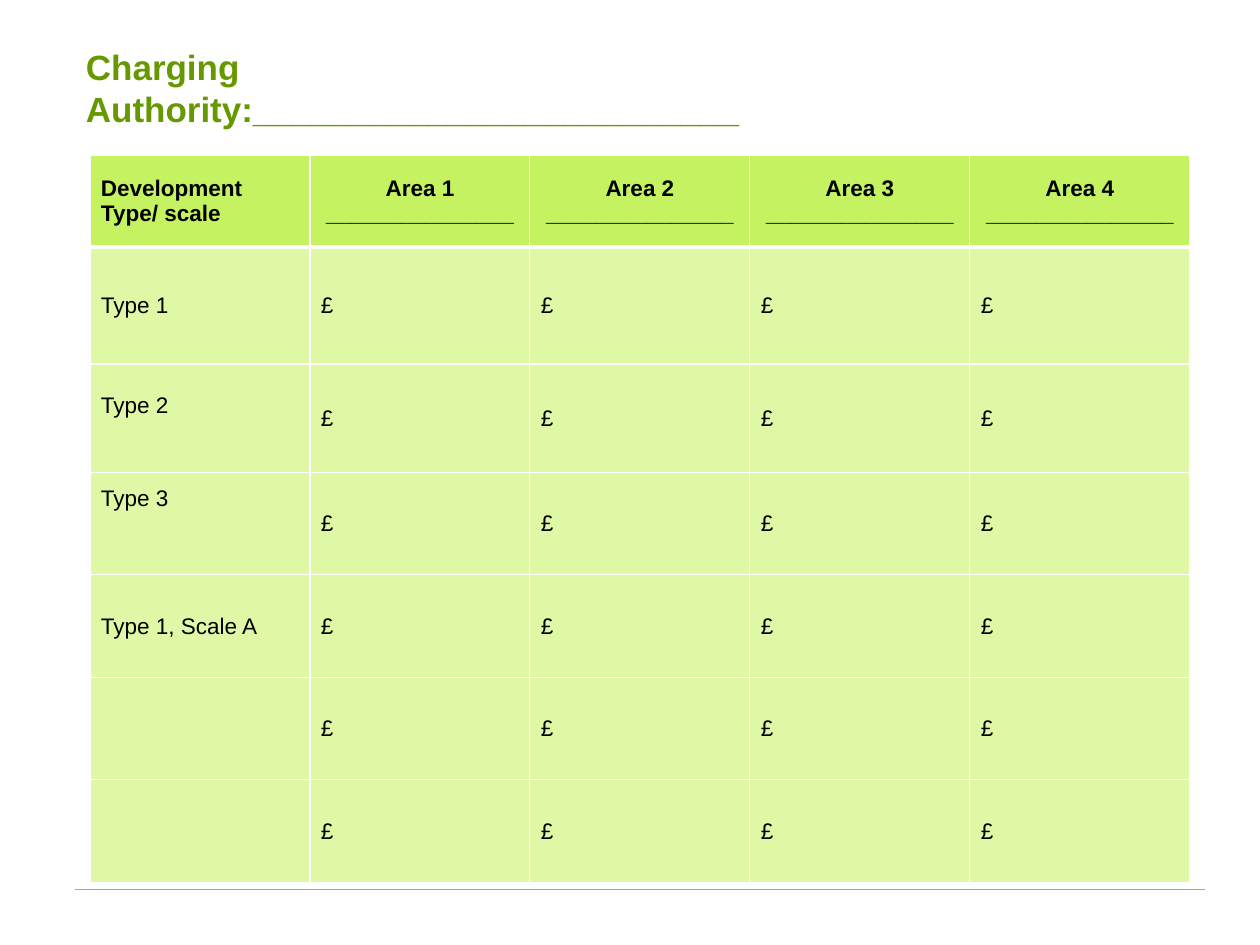
from pptx import Presentation
from pptx.dml.color import RGBColor
from pptx.enum.shapes import MSO_CONNECTOR
from pptx.enum.text import MSO_ANCHOR, PP_ALIGN
from pptx.oxml.ns import qn
from pptx.util import Emu, Pt
from lxml.etree import SubElement

TYPES = ["Type 1", "Type 2", "Type 3", "Type 1, Scale A", "", ""]
AREAS = 4
WIDTH = 220
HEIGHTS = [92, 117, 109] + [102, 103] * 2
LIFTS = {"Type 2": 25, "Type 3": 50}
PAD_X, PAD_Y = 11, 6


def px(count):
    """Turn whole pixels, 90 to the inch, into EMU."""
    return Emu(count * 10160)


def tint(code):
    """Turn a hex string into a colour."""
    return RGBColor.from_string(code)


def style(frame, size, color, bold=False, align=PP_ALIGN.LEFT):
    """Format every run of a text frame."""
    for para in frame.paragraphs:
        para.alignment = align
        for run in para.runs:
            font = run.font
            font.name, font.size, font.bold = "Arial", Pt(size), bold
            font.color.rgb = tint(color)


def pad(item, base=PAD_Y):
    """Set the four margins of a cell or text frame."""
    item.margin_left = item.margin_right = px(PAD_X)
    item.margin_top, item.margin_bottom = px(PAD_Y), px(base)


def add_title(slide, text, left, top, width, height):
    """Add the slide heading."""
    frame = slide.shapes.add_textbox(px(left), px(top), px(width), px(height)).text_frame
    frame.word_wrap = True
    frame.vertical_anchor = MSO_ANCHOR.MIDDLE
    pad(frame)
    frame.text = text
    style(frame, 28, "669900", bold=True)


def add_rule(slide, left, right, y):
    """Add the thin footer rule."""
    rule = slide.shapes.add_connector(MSO_CONNECTOR.STRAIGHT, px(left), px(y), px(right), px(y))
    rule.line.color.rgb = tint("99CC00")
    rule.line.width = Pt(0.75)
    SubElement(rule.element.spPr, qn("a:effectLst"))


def edge(cell, **sides):
    """Draw white cell borders of the given point widths."""
    props = cell._tc.get_or_add_tcPr()
    for side, width in sides.items():
        line = SubElement(props, qn(f"a:ln{side}"), w=str(Pt(width)))
        fill = SubElement(line, qn("a:solidFill"))
        SubElement(fill, qn("a:srgbClr"), val="FFFFFF")


def fill_cell(cell, text, row, col):
    """Write and format one table cell."""
    head = row == 0
    edge(cell, L=1, R=1, T=3 if row == 1 else 1, B=3 if head else 1)
    cell.fill.solid()
    cell.fill.fore_color.rgb = tint("C5F260" if head else "DFF8A6")
    cell.vertical_anchor = MSO_ANCHOR.MIDDLE
    pad(cell, PAD_Y + LIFTS.get(text, 0))
    cell.text_frame.text = text
    align = PP_ALIGN.CENTER if head and col else PP_ALIGN.LEFT
    style(cell.text_frame, 18, "000000", bold=head, align=align)


def add_rates(slide, left, top):
    """Add the table of charges by type and area."""
    names = [f"Area {num}\n" + "_" * 15 for num in range(1, AREAS + 1)]
    rows = [["Development Type/ scale"] + names]
    rows += [[kind] + ["£"] * AREAS for kind in TYPES]
    cols = AREAS + 1
    table = slide.shapes.add_table(
        len(rows), cols, px(left), px(top), px(WIDTH * cols), px(sum(HEIGHTS))
    ).table
    table.horz_banding = False
    for column in table.columns:
        column.width = px(WIDTH)
    for row, texts in enumerate(rows):
        table.rows[row].height = px(HEIGHTS[row])
        for col, text in enumerate(texts):
            fill_cell(table.cell(row, col), text, row, col)


def main():
    """Build and save the slide."""
    deck = Presentation()
    deck.slide_width, deck.slide_height = px(1260), px(945)
    slide = deck.slides.add_slide(deck.slide_layouts[6])
    add_rule(slide, 75, 1205, 889)
    add_title(slide, "Charging Authority:" + "_" * 25, 75, 38, 705, 100)
    add_rates(slide, 90, 155)
    deck.save("out.pptx")


if __name__ == "__main__":
    main()
